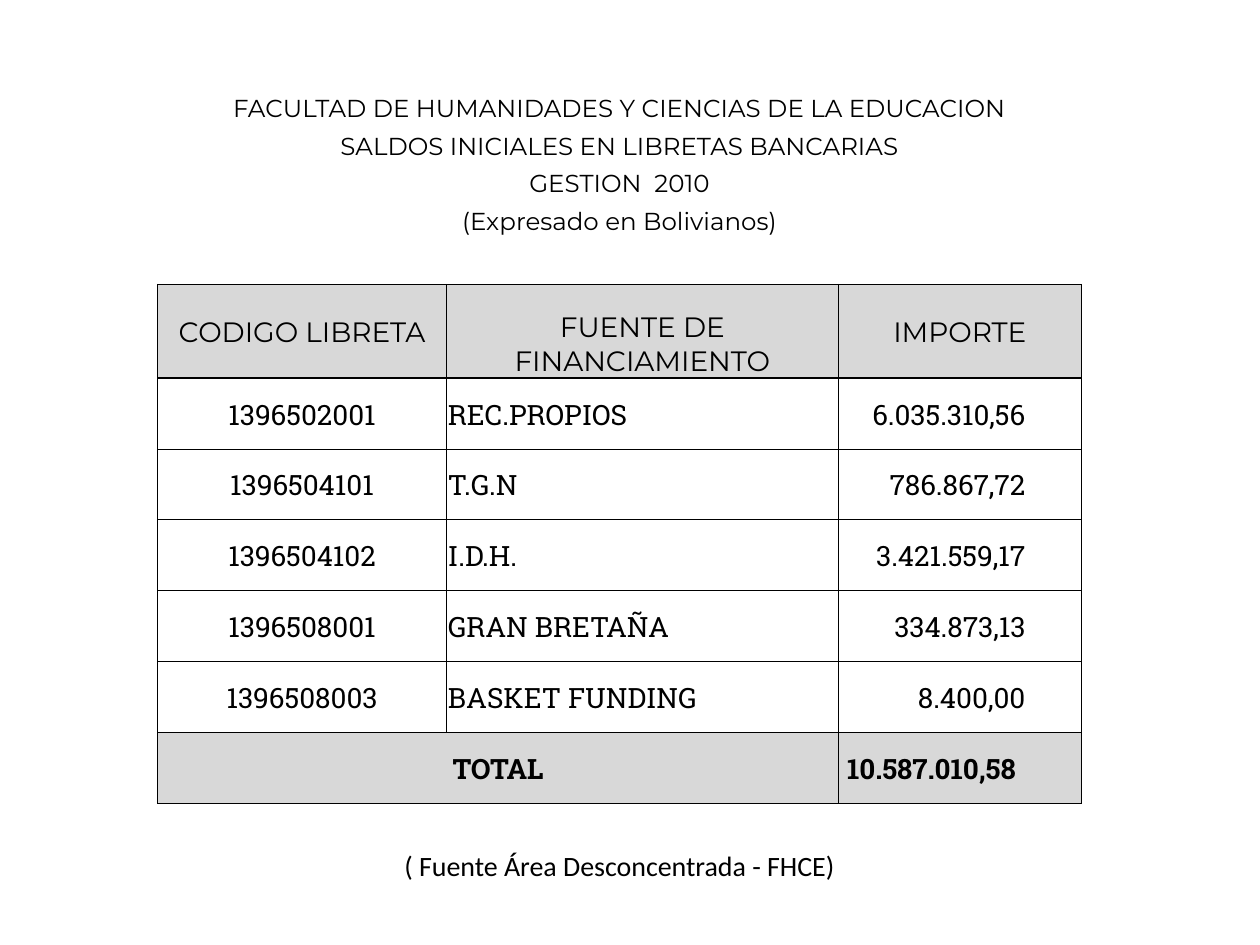
from pptx import Presentation
from pptx.util import Cm, Pt
from pptx.dml.color import RGBColor
from pptx.enum.text import PP_ALIGN as Al, MSO_ANCHOR as Anc
from lxml.etree import fromstring

NS = "http://schemas.openxmlformats.org/drawingml/2006/main"


def tint(code):
    return RGBColor.from_string(code)


def edge(cell, side, width):
    ink = '<a:solidFill><a:srgbClr val="000000"/></a:solidFill>' if width else "<a:noFill/>"
    cell._tc.get_or_add_tcPr().append(fromstring(
        f'<a:ln{side} xmlns:a="{NS}" w="{Pt(width)}">{ink}</a:ln{side}>'))


heads = [
    "FACULTAD DE HUMANIDADES Y CIENCIAS DE LA EDUCACION",
    "SALDOS INICIALES EN LIBRETAS BANCARIAS",
    "GESTION  2010",
    "(Expresado en Bolivianos)",
]
body = [
    ["1396502001", "REC.PROPIOS", "6.035.310,56"],
    ["1396504101", "T.G.N", "786.867,72"],
    ["1396504102", "I.D.H.", "3.421.559,17"],
    ["1396508001", "GRAN BRETAÑA", "334.873,13"],
    ["1396508003", "BASKET FUNDING", "8.400,00"],
]
rows = [[text, "", ""] for text in heads]
rows += [["", "", ""], ["CODIGO LIBRETA", "FUENTE DE FINANCIAMIENTO", "IMPORTE"]]
rows += body
rows += [["TOTAL", "", "10.587.010,58"], ["", "", ""],
         ["( Fuente Área Desconcentrada - FHCE)", "", ""]]
top, total = 5, 11
wide = [5.82, 7.9, 4.9]
tall = [0.91] + [0.76] * 3 + [0.97, 1.88] + [1.43] * 6 + [0.89, 0.74]

title = {"name": "Montserrat", "size": Pt(14), "bold": False}
label = {"name": "Montserrat", "size": Pt(16), "bold": False}
data = {"name": "Roboto Slab", "size": Pt(16), "bold": False}
total_font = {"name": "Roboto Slab", "size": Pt(16), "bold": True}
note = {"name": "Calibri", "size": Pt(16), "bold": False}
fonts = [title] * 5 + [label] + [data] * 5 + [total_font, note, note]

prs = Presentation()
prs.slide_width, prs.slide_height = Cm(25.4), Cm(19.05)
slide = prs.slides.add_slide(prs.slide_layouts[6])
table = slide.shapes.add_table(len(rows), 3, Cm(3.18), Cm(1.58),
                               Cm(sum(wide)), Cm(sum(tall))).table
table.first_row = table.horz_banding = False
for col, width in zip(table.columns, wide):
    col.width = Cm(width)
for row, height in zip(table.rows, tall):
    row.height = Cm(height)

for r, texts in enumerate(rows):
    grid = top <= r <= total
    above = 0 if r < top or r > total + 1 else 0.5 if top + 1 < r < total else 1
    below = 0 if r < top - 1 or r > total else 0.5 if top < r < total - 1 else 1
    for c, text in enumerate(texts):
        cell = table.cell(r, c)
        for side, width in zip("LRTB", [grid, grid, above, below]):
            edge(cell, side, int(width) if width in (0, 1) else width)
        if r in (top, total):
            cell.fill.solid()
            cell.fill.fore_color.rgb = tint("D8D8D8")
        else:
            cell.fill.background()
        money = c == 2 and r > top
        low = not grid or (r == top and c == 1)
        pad = (1.32 if r == total else 1.13) if money else 0.03
        look = {"margin_left": Cm(0.03), "margin_right": Cm(pad),
                "margin_top": Cm(0.03), "margin_bottom": 0,
                "vertical_anchor": Anc.BOTTOM if low else Anc.MIDDLE}
        for key, value in look.items():
            setattr(cell, key, value)
        para = cell.text_frame.paragraphs[0]
        para.alignment = (Al.RIGHT if money
                          else Al.LEFT if c == 1 and top < r < total else Al.CENTER)
        font = para.font
        if text:
            run = para.add_run()
            run.text = text
            font = run.font
        for key, value in fonts[r].items():
            setattr(font, key, value)
        font.color.rgb = tint("000000")

for r in [0, 1, 2, 3, total, len(rows) - 1]:
    last = 1 if r == total else 2
    table.cell(r, 0).merge(table.cell(r, last))

prs.save("out.pptx")
